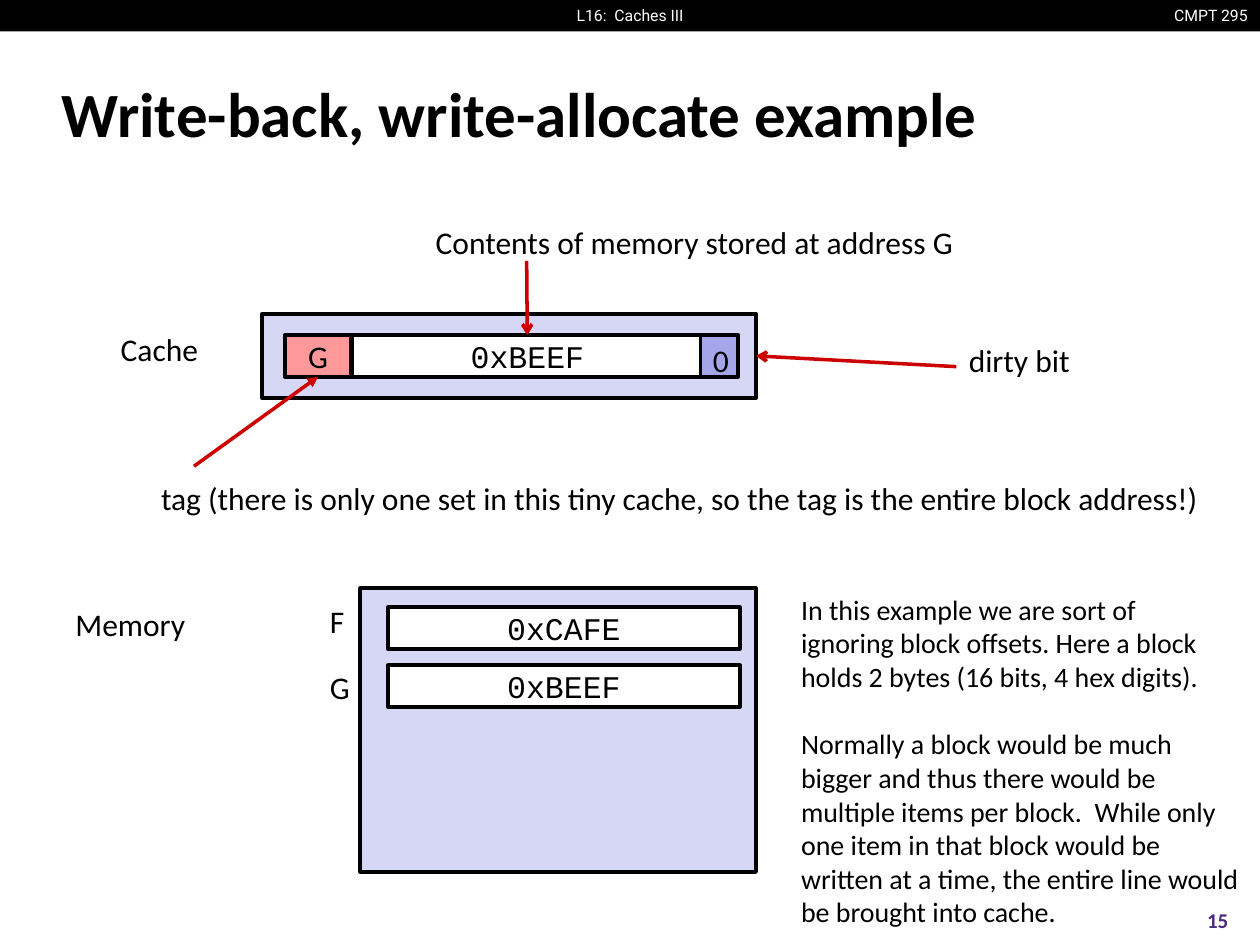
from lxml import etree
from pptx import Presentation, util as u
from pptx.dml.color import RGBColor
from pptx.enum import shapes, text
from pptx.oxml.ns import qn

BODY, MONO, HEADER = "Calibri", "Courier New", "Roboto"
BLACK, WHITE, RED, LAVENDER = "000000", "FFFFFF", "CC0000", "D6D6F5"
ALIGN = text.PP_ALIGN
BLOCK_HEIGHT = 0.33


def colour(code):
    """Turn a hex string into a colour."""
    return RGBColor.from_string(code)


def style(para, size, face=BODY, code=BLACK, align=ALIGN.LEFT, bold=False):
    """Set the font and alignment of one paragraph."""
    para.alignment = align
    para.font.size = u.Pt(size)
    para.font.name = face
    para.font.bold = bold
    para.font.color.rgb = colour(code)


def add_label(slide, box, words, size=18, **look):
    """Add an unwrapped text box, one paragraph for each string in words."""
    label = slide.shapes.add_textbox(*map(u.Inches, box))
    frame = label.text_frame
    frame.word_wrap = False
    frame.auto_size = text.MSO_AUTO_SIZE.SHAPE_TO_FIT_TEXT
    frame.text = "\n".join(words)
    for para in frame.paragraphs:
        style(para, size, **look)
    return label


def add_block(slide, box, fill, words="", face=BODY,
              anchor=text.MSO_ANCHOR.MIDDLE, outlined=True):
    """Add a filled rectangle with centred text."""
    block = slide.shapes.add_shape(shapes.MSO_SHAPE.RECTANGLE, *map(u.Inches, box))
    block.shadow.inherit = False
    block.fill.solid()
    block.fill.fore_color.rgb = colour(fill)
    if outlined:
        block.line.color.rgb = colour(BLACK)
        block.line.width = u.Pt(2.25)
    else:
        block.line.fill.background()
    if words:
        block.text_frame.text = words
        block.text_frame.vertical_anchor = anchor
        style(block.text_frame.paragraphs[0], 18, face, align=ALIGN.CENTER)
    return block


def add_arrow(slide, start, end, tip, kind):
    """Add a red arrow whose tip is "headEnd" or "tailEnd"."""
    arrow = slide.shapes.add_connector(
        shapes.MSO_CONNECTOR.STRAIGHT, *map(u.Inches, (*start, *end)))
    arrow.line.color.rgb = colour(RED)
    arrow.line.width = u.Pt(2)
    line = arrow.line._get_or_add_ln()
    etree.SubElement(line, qn(f"a:{tip}"), type=kind)
    etree.SubElement(arrow._element.spPr, qn("a:effectLst"))
    return arrow


def add_header(slide, box):
    """Draw the black strip with the lecture and course names."""
    left, top, width, height = box
    add_block(slide, box, BLACK, outlined=False)
    look = dict(size=9, face=HEADER, code=WHITE)
    add_label(slide, (left + width - 0.81, top, 0.81, height), ["CMPT 295"],
              align=ALIGN.RIGHT, **look)
    add_label(slide, (left + (width - 1.09) / 2, top, 1.09, height),
              ["L16:  Caches III"], align=ALIGN.CENTER, **look)


def add_title(slide, box):
    """Place and format the title placeholder."""
    title = slide.shapes.title
    title.left, title.top, title.width, title.height = map(u.Inches, box)
    title.text_frame.text = "Write-back, write-allocate example"
    title.text_frame.vertical_anchor = text.MSO_ANCHOR.MIDDLE
    style(title.text_frame.paragraphs[0], 36, bold=True)


def add_cache(slide, box):
    """Draw the cache line with its tag, data and dirty bit, and their callouts."""
    left, top, width, height = box
    row = top + (height - BLOCK_HEIGHT) / 2
    cache = add_block(slide, box, LAVENDER)
    data = add_block(slide, (left + 0.71, row, 2.79, BLOCK_HEIGHT), WHITE, "0xBEEF", MONO)
    tag = add_block(slide, (left + 0.18, row, 0.53, BLOCK_HEIGHT), "FF9999", "G")
    add_block(slide, (left + 3.48, row, 0.3, BLOCK_HEIGHT), "A5A5E9", "0",
              anchor=text.MSO_ANCHOR.TOP)

    add_label(slide, (left - 1.22, top + 0.08, 1.04, 0.5), ["Cache"])
    add_label(slide, (left + 1.28, top - 0.77, 4.36, 0.4),
              ["Contents of memory stored at address G"])
    add_label(slide, (left + 5.51, top + 0.17, 1.32, 0.5), ["dirty bit"])
    add_label(slide, (left - 0.9, top + 1.26, 8.54, 0.4),
              ["tag (there is only one set in this tiny cache, "
               "so the tag is the entire block address!)"])

    middle = left + 2.1
    contents_arrow = add_arrow(slide, (middle, top - 0.42), (middle, row),
                               "tailEnd", "arrow")
    contents_arrow.end_connect(data, 0)
    dirty_arrow = add_arrow(slide, (left + 5.51, top + 0.42),
                            (left + width, top + height / 2), "tailEnd", "arrow")
    dirty_arrow.end_connect(cache, 3)
    tag_arrow = add_arrow(slide, (left + 0.44, row + BLOCK_HEIGHT),
                          (left - 0.54, top + 1.21), "headEnd", "triangle")
    tag_arrow.begin_connect(tag, 2)


def add_memory(slide, box):
    """Draw the memory with its addressed blocks."""
    left, top, _, _ = box
    add_block(slide, box, LAVENDER)
    add_label(slide, (left - 2.36, top + 0.08, 1.4, 0.5), ["Memory"])
    rows = [("F", "0xCAFE", 0.32, 0.06, 0.15), ("G", "0xBEEF", 0.36, 0.58, 0.61)]
    for address, value, width, label_drop, block_drop in rows:
        add_label(slide, (left - 0.34, top + label_drop, width, 0.4), [address])
        add_block(slide, (left + 0.22, top + block_drop, 2.79, BLOCK_HEIGHT),
                  WHITE, value, MONO)


def add_remarks(slide, box):
    """Write the two remarks on block size."""
    remarks = add_label(slide, box, [
        "In this example we are sort of\v"
        "ignoring block offsets. Here a block\v"
        "holds 2 bytes (16 bits, 4 hex digits).",
        "Normally a block would be much\v"
        "bigger and thus there would be\v"
        "multiple items per block.  While only\v"
        "one item in that block would be\v"
        "written at a time, the entire line would\v"
        "be brought into cache."], size=16)
    remarks.text_frame.paragraphs[1].space_before = u.Pt(19.5)


def add_page_number(slide, box):
    """Write the page number."""
    number = slide.shapes.add_textbox(*map(u.Inches, box))
    number.text_frame.word_wrap = True
    number.text_frame.vertical_anchor = text.MSO_ANCHOR.MIDDLE
    number.text_frame.text = "15"
    style(number.text_frame.paragraphs[0], 12, code="4B2A85",
          align=ALIGN.CENTER, bold=True)


def main():
    """Build and save the slide."""
    deck = Presentation()
    deck.slide_width, deck.slide_height = u.Inches(10), u.Inches(7.5)
    slide = deck.slides.add_slide(deck.slide_layouts.get_by_name("Title Only"))
    add_header(slide, (0, 0, 10, 0.25))
    add_title(slide, (0.39, 0.48, 9.19, 0.83))
    add_page_number(slide, (9.33, 7.1, 0.67, 0.4))
    add_cache(slide, (2.08, 2.49, 3.92, 0.67))
    add_memory(slide, (2.86, 4.67, 3.14, 2.25))
    add_remarks(slide, (6.26, 4.65, 3.86, 2.79))
    deck.save("out.pptx")


if __name__ == "__main__":
    main()
